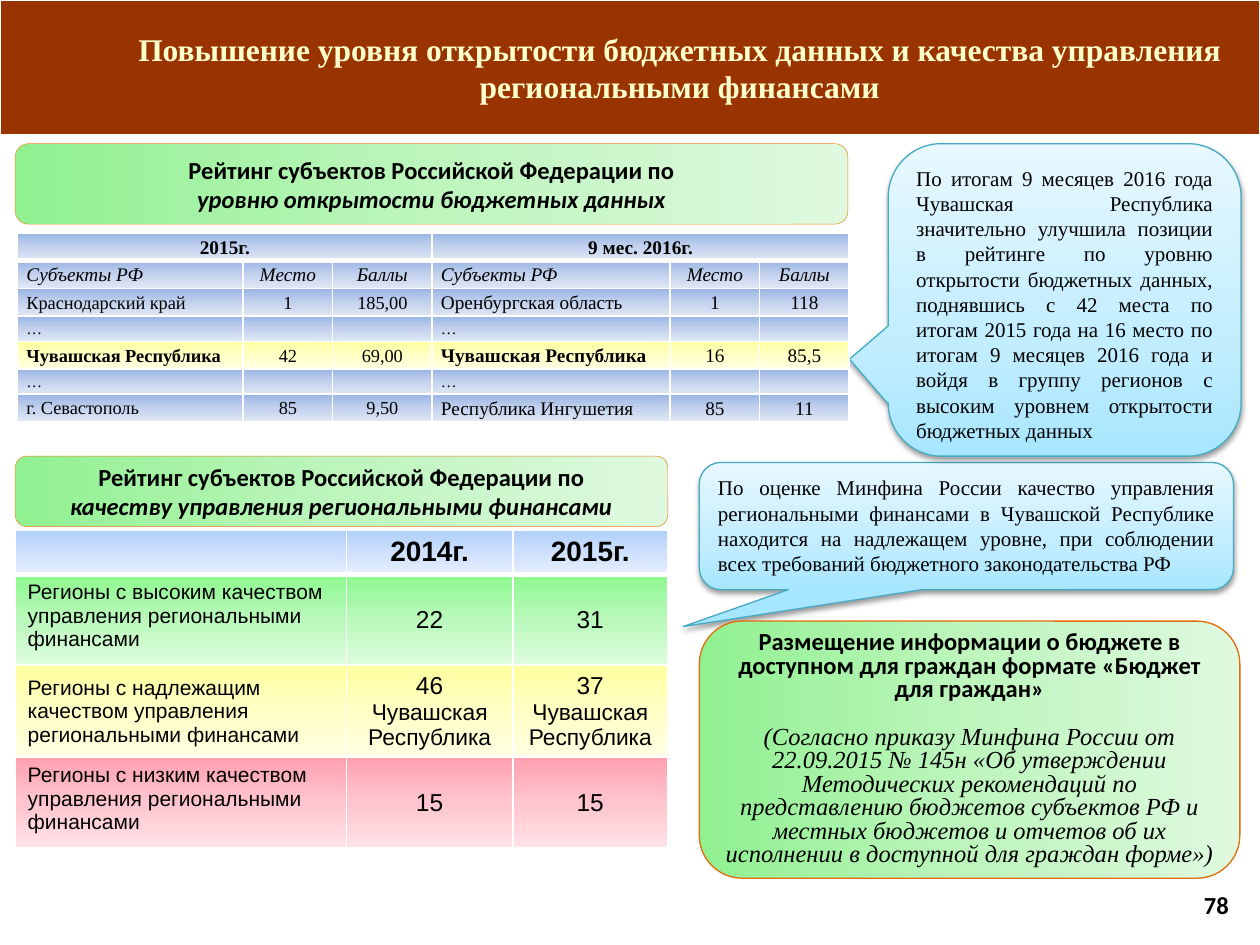
from lxml import etree
from pptx import Presentation
from pptx.dml.color import RGBColor
from pptx.enum import shapes, text
from pptx.oxml.ns import qn
from pptx.util import Inches, Pt

SERIF, SANS, HEAD = "Times New Roman", "Arial", "Calibri"
LEFT, CENTER, RIGHT, JUSTIFY = (text.PP_ALIGN.LEFT, text.PP_ALIGN.CENTER,
                                text.PP_ALIGN.RIGHT, text.PP_ALIGN.JUSTIFY)
TOP, MIDDLE = text.MSO_ANCHOR.TOP, text.MSO_ANCHOR.MIDDLE
ROUND = shapes.MSO_SHAPE.ROUNDED_RECTANGLE
CALLOUT = shapes.MSO_SHAPE.ROUNDED_RECTANGULAR_CALLOUT

# Gradients: (position in percent, colour)
GREEN_BOX = [(0, "91F191"), (50, "BDF5BD"), (100, "DFF9DF")]
SKY = [(0, "A7E6FF"), (35, "C1EDFF"), (100, "E7F8FF")]
BLUE = [(0, "9AB5E4"), (50, "C2D1ED"), (100, "E1E8F5")]
PALE_BLUE = [(0, "B0CFFB"), (50, "CEE0FC"), (100, "E6EFFD")]
GREEN = [(0, "8CF98D"), (50, "BAF9BB"), (100, "DEFCDE")]
YELLOW = [(0, "FFFFA0"), (50, "FFFFC5"), (100, "FFFFE3")]
PINK = [(0, "FFA0AF"), (50, "FFC5CE"), (100, "FFE3E7")]

TITLE = ("Повышение уровня открытости бюджетных данных и качества управления "
         "региональными финансами")
RATING = "Рейтинг субъектов Российской Федерации по"
HEADINGS = [
    ((0.12, 1.14, 6.61, 0.64), "уровню открытости бюджетных данных"),
    ((0.12, 3.62, 5.18, 0.56), "качеству управления региональными финансами"),
]
CALLOUTS = [
    ((5.55, 3.67, 4.24, 1.01), (-0.53, 0.79, 0.17),
     "По оценке Минфина России качество управления региональными финансами в "
     "Чувашской Республике находится на надлежащем уровне, при соблюдении всех "
     "требований бюджетного законодательства РФ"),
    ((7.05, 1.14, 2.8, 2.48), (-0.61, 0.19, 0.17),
     "По итогам 9 месяцев 2016 года Чувашская Республика значительно улучшила "
     "позиции в рейтинге по уровню открытости бюджетных данных, поднявшись с 42 "
     "места по итогам 2015 года на 16 место по итогам 9 месяцев 2016 года и войдя "
     "в группу регионов с высоким уровнем открытости бюджетных данных"),
]
CITIZENS = ("Размещение информации о бюджете в доступном для граждан формате "
            "«Бюджет для граждан»")
ORDER = ("(Согласно приказу Минфина России от 22.09.2015 № 145н «Об утверждении "
         "Методических рекомендаций по представлению бюджетов субъектов РФ и "
         "местных бюджетов и отчетов об их исполнении в доступной для граждан форме»)")

OPENNESS = [
    ["2015г.", "", "", "9 мес. 2016г.", "", ""],
    ["Субъекты РФ", "Место", "Баллы"] * 2,
    ["Краснодарский край", "1", "185,00", "Оренбургская область", "1", "118"],
    ["…", "", ""] * 2,
    ["Чувашская Республика", "42", "69,00", "Чувашская Республика", "16", "85,5"],
    ["…", "", ""] * 2,
    ["г. Севастополь", "85", "9,50", "Республика Ингушетия", "85", "11"],
]
QUALITY = [
    (PALE_BLUE, ["", "2014г.", "2015г."]),
    (GREEN, ["Регионы с высоким качеством управления региональными финансами", "22", "31"]),
    (YELLOW, ["Регионы с надлежащим качеством управления региональными финансами",
              "46\nЧувашская Республика", "37\nЧувашская Республика"]),
    (PINK, ["Регионы с низким качеством управления региональными финансами", "15", "15"]),
]


def rgb(value):
    return RGBColor.from_string(value)


def sub(parent, tag, **attrs):
    return etree.SubElement(parent, qn(tag), attrs)


def paint(fill, props, stops, angle):
    """Fill with a linear gradient; angle is clockwise in degrees."""
    fill.gradient()
    stop_list = props.find(".//" + qn("a:gsLst"))
    for old in list(stop_list):
        stop_list.remove(old)
    for pos, color in stops:
        sub(sub(stop_list, "a:gs", pos=str(pos * 1000)), "a:srgbClr", val=color)
    props.find(".//" + qn("a:lin")).set("ang", str(angle * 60000))


def write(tf, paragraphs, align, anchor, spacing=None):
    """Each paragraph is (text, size, font, bold, italic)."""
    tf.word_wrap = True
    tf.vertical_anchor = anchor
    for i, (words, size, font, bold, italic) in enumerate(paragraphs):
        p = tf.add_paragraph() if i else tf.paragraphs[0]
        p.alignment = align
        if spacing:
            p.line_spacing = spacing
        f = p.font
        f.size, f.name, f.bold, f.italic = Pt(size), font, bold, italic
        f.color.rgb = rgb("000000")
        if words:
            p.add_run().text = words
        else:
            p._p.get_or_add_endParaRPr().set("sz", str(int(size * 100)))


def add_box(s, kind, at, stops, angle, line, width):
    sp = s.shapes.add_shape(kind, *map(Inches, at))
    sp.shadow.inherit = False
    paint(sp.fill, sp.element.spPr, stops, angle)
    sp.line.color.rgb = rgb(line)
    sp.line.width = Pt(width)
    return sp


def add_callout(s, at, adjustments, words):
    sp = add_box(s, CALLOUT, at, SKY, 270, "46AAC5", 0.75)
    for i, value in enumerate(adjustments):
        sp.adjustments[i] = value
    effects = sp.element.spPr.find(qn("a:effectLst"))
    shadow = sub(effects, "a:outerShdw", blurRad=str(Pt(3.1)), dist=str(Pt(1.6)),
                 dir="5400000", rotWithShape="0")
    sub(sub(shadow, "a:srgbClr", val="000000"), "a:alpha", val="38000")
    write(sp.text_frame, [(words, 12, SERIF, False, False)], JUSTIFY, TOP)


def add_grid(s, at, widths, heights):
    frame = s.shapes.add_table(len(heights), len(widths), *map(Inches, at))
    table = frame.table
    table.first_row = table.horz_banding = False
    for column, width in zip(table.columns, widths):
        column.width = Inches(width)
    for row, height in zip(table.rows, heights):
        row.height = Inches(height)
    return table


def dress(cell, stops, header):
    """Gradient fill and white borders, heavier under the header."""
    props = cell._tc.get_or_add_tcPr()
    paint(cell.fill, props, stops, 90)
    for i, side in enumerate("LRTB"):
        width = Pt(3 if header and side == "B" else 1)
        ln = etree.Element(qn("a:ln" + side), w=str(width))
        sub(sub(ln, "a:solidFill"), "a:srgbClr", val="FFFFFF")
        props.insert(i, ln)


def add_openness_table(s):
    table = add_grid(s, (0.14, 1.85, 6.6, 1.5), [1.79, 0.71, 0.79, 1.89, 0.71, 0.71],
                     [0.22, 0.22, 0.22, 0.2, 0.22, 0.2, 0.22])
    for r, row in enumerate(OPENNESS):
        ours = row[0] == "Чувашская Республика"
        for c, words in enumerate(row):
            cell = table.cell(r, c)
            dress(cell, YELLOW if ours else BLUE, r == 0)
            cell.margin_left = cell.margin_right = Inches(0.07)
            cell.margin_top = cell.margin_bottom = 0
            name = c % 3 == 0
            size = 9 if words in ("", "…") else 10.5 if r > 1 and c < 3 else 11
            write(cell.text_frame, [(words, size, SERIF, r == 0 or (ours and name), r == 1)],
                  LEFT if name and r else CENTER, MIDDLE, 1.07)
            cell.vertical_anchor = MIDDLE
    for c in (0, 3):
        table.cell(0, c).merge(table.cell(0, c + 2))


def add_quality_table(s):
    table = add_grid(s, (0.12, 4.21, 5.18, 2.57), [2.63, 1.32, 1.23],
                     [0.35, 0.72, 0.73, 0.72])
    for r, (stops, row) in enumerate(QUALITY):
        for c, words in enumerate(row):
            cell = table.cell(r, c)
            dress(cell, stops, r == 0)
            sizes = (16,) if r == 0 else (14, 13) if c else (12,)
            write(cell.text_frame,
                  [(line, size, SANS, r == 0, False)
                   for line, size in zip(words.split("\n"), sizes)],
                  CENTER if c or r == 0 else LEFT, TOP)
            centred = r > 0 and (c > 0 or r == 2)
            cell.vertical_anchor = MIDDLE if centred else TOP


def add_title(s):
    band = s.shapes.add_shape(shapes.MSO_SHAPE.RECTANGLE, 0, 0, Inches(10), Inches(1.07))
    band.shadow.inherit = False
    band.fill.solid()
    band.fill.fore_color.rgb = rgb("993300")
    band.line.color.rgb = rgb("FFFFFF")
    band.line.width = Pt(0.75)
    s.shapes._spTree.insert(2, band.element)  # behind the title
    title = s.shapes.title
    title.left, title.top, title.width, title.height = map(Inches, (0.83, 0.18, 9.13, 0.71))
    write(title.text_frame, [(TITLE, 18, SERIF, True, False)], CENTER, MIDDLE)
    title.text_frame.paragraphs[0].font.color.rgb = rgb("FFFFCC")


def main():
    prs = Presentation()
    prs.slide_width, prs.slide_height = Inches(10), Inches(7.5)
    s = prs.slides.add_slide(prs.slide_layouts[5])
    add_title(s)
    for at, subject in HEADINGS:
        sp = add_box(s, ROUND, at, GREEN_BOX, 0, "F57E1B", 0.25)
        write(sp.text_frame, [(RATING, 14, HEAD, True, False),
                              (subject, 14, HEAD, True, True)], CENTER, MIDDLE)
    for callout in CALLOUTS:
        add_callout(s, *callout)
    add_openness_table(s)
    add_quality_table(s)
    sp = add_box(s, ROUND, (5.55, 4.93, 4.29, 2.04), GREEN_BOX, 0, "E46C0A", 0.75)
    write(sp.text_frame, [(CITIZENS, 14, HEAD, True, False),
                          (ORDER, 14, SERIF, False, True)], CENTER, MIDDLE, 0.8)
    sp.text_frame.paragraphs[1].space_before = Pt(13.5)
    number = s.shapes.add_textbox(*map(Inches, (8.7, 6.98, 1.15, 0.4)))
    write(number.text_frame, [("78", 14, HEAD, True, False)], RIGHT, MIDDLE)
    prs.save("out.pptx")


if __name__ == "__main__":
    main()
